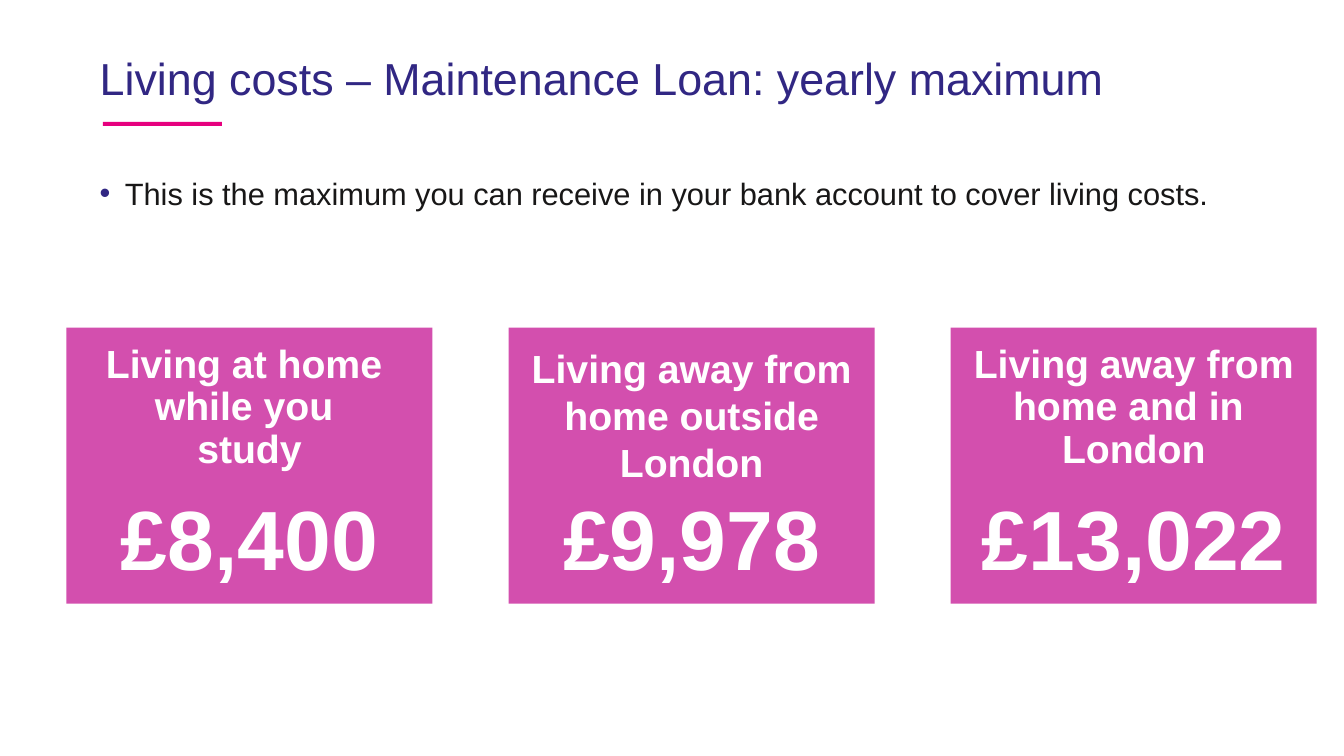
import pptx
import pptx.util
import pptx.dml.color
import pptx.enum.shapes
import pptx.enum.text
import lxml.etree

TITLE = "Living costs – Maintenance Loan: yearly maximum"
NOTE = "This is the maximum you can receive in your bank account to cover living costs."
CARDS = [
    ("Living at home \nwhile you \nstudy", 0.9, "£8,400"),
    ("Living away from home outside London", 1.0, "£9,978"),
    ("Living away from home and in \nLondon", 0.9, "£13,022"),
]
NAVY, PINK, ROSE, INK, WHITE = "312783", "E6007E", "D34FAE", "181717", "FFFFFF"
WIDE, HIGH = 13.33, 7.5
EDGE = 0.89
LEFT, STEP, CARD = 0.66, 4.385, 3.63
TOP, TALL, ROW = 3.25, 2.74, 1.4
HEAD, SUM = 3.37, 4.78

Inches, Pt = pptx.util.Inches, pptx.util.Pt
ALIGN, ANCHOR = pptx.enum.text.PP_ALIGN, pptx.enum.text.MSO_ANCHOR


def color(code):
    """Turn a hex string into a colour."""
    return pptx.dml.color.RGBColor.from_string(code)


def block(slide, box, fill):
    """Draw a plain filled rectangle."""
    kind = pptx.enum.shapes.MSO_SHAPE.RECTANGLE
    shape = slide.shapes.add_shape(kind, *map(Inches, box))
    shape.shadow.inherit = False
    shape.fill.solid()
    shape.fill.fore_color.rgb = color(fill)
    shape.line.fill.background()


def bullet(para, code):
    """Give a paragraph a coloured round bullet with a hanging indent."""
    props = para._p.get_or_add_pPr()
    props.set("marL", str(Inches(0.25)))
    props.set("indent", str(-Inches(0.25)))
    space = pptx.oxml.ns.qn
    tint = lxml.etree.SubElement(props, space("a:buClr"))
    lxml.etree.SubElement(tint, space("a:srgbClr"), val=code)
    lxml.etree.SubElement(props, space("a:buFont"), typeface="Arial")
    lxml.etree.SubElement(props, space("a:buChar"), char="•")


def write(slide, box, text, size, ink, bold=False, align=ALIGN.LEFT,
          lead=1.0, anchor=ANCHOR.TOP, dot=None):
    """Place one paragraph of text in a wrapping box."""
    frame = slide.shapes.add_textbox(*map(Inches, box)).text_frame
    frame.word_wrap = True
    frame.vertical_anchor = anchor
    para = frame.paragraphs[0]
    para.text = text.replace("\n", "\v")
    para.alignment = align
    para.line_spacing = lead
    if dot:
        bullet(para, dot)
    font = para.font
    font.name, font.size, font.bold = "Arial", Pt(size), bold
    font.color.rgb = color(ink)


def main():
    """Build the slide and save it."""
    deck = pptx.Presentation()
    deck.slide_width, deck.slide_height = Inches(WIDE), Inches(HIGH)
    slide = deck.slides.add_slide(deck.slide_layouts[6])
    block(slide, (1.02, 1.21, 1.18, 0.04), PINK)
    write(slide, (EDGE, 0.38, WIDE - EDGE, 0.71), TITLE, 32, NAVY,
          lead=0.9, anchor=ANCHOR.BOTTOM)
    write(slide, (EDGE, 1.68, 11.97, 0.71), NOTE, 22, INK, dot=NAVY)
    for col, (label, lead, cost) in enumerate(CARDS):
        left = LEFT + col * STEP
        block(slide, (left, TOP, CARD, TALL), ROSE)
        write(slide, (left, HEAD, CARD, ROW), label, 28, WHITE, True,
              ALIGN.CENTER, lead)
        write(slide, (left, SUM, CARD, ROW), cost, 60, WHITE, True,
              ALIGN.CENTER)
    deck.save("out.pptx")


if __name__ == "__main__":
    main()
